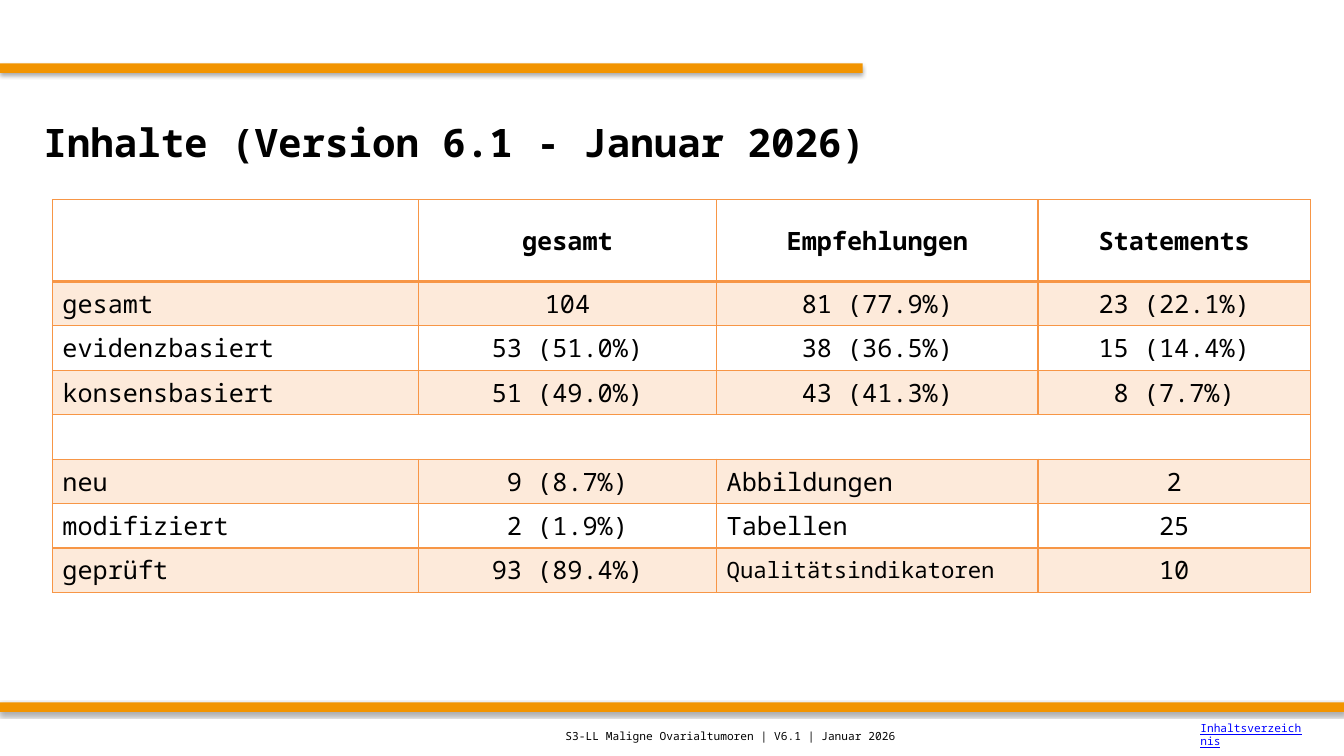
from dataclasses import dataclass

from lxml.etree import SubElement
from pptx import Presentation
from pptx.dml.color import RGBColor
from pptx.enum.shapes import MSO_SHAPE as ShapeKind
from pptx.enum.text import MSO_ANCHOR as Anchor, MSO_AUTO_SIZE as AutoSize, PP_ALIGN as Align
from pptx.oxml.ns import qn
from pptx.slide import Slide
from pptx.table import Table, _Cell as Cell
from pptx.text.text import TextFrame
from pptx.util import Cm, Pt

COLORS = {
    "bar": "F29400",
    "table": "F79646",
    "text": "000000",
    "link": "0000FF",
}
FONT = "Noto Sans Mono"
SLIDE_WIDTH, SLIDE_HEIGHT = 33.87, 19.05


@dataclass(frozen=True)
class Box:
    left: float
    top: float
    width: float
    height: float

    def lengths(self) -> tuple[Cm, Cm, Cm, Cm]:
        return Cm(self.left), Cm(self.top), Cm(self.width), Cm(self.height)


@dataclass(frozen=True)
class TextStyle:
    size: float
    color: str = "text"
    bold: bool = False
    underline: bool = False
    align: Align = Align.LEFT


@dataclass(frozen=True)
class Label:
    text: str
    box: Box
    style: TextStyle


BARS = [Box(0, 1.6, 21.74, 0.24), Box(0, 17.7, SLIDE_WIDTH, 0.24)]
TITLE = Label("Inhalte (Version 6.1 - Januar 2026)", Box(0.84, 2.1, 32.18, 2.97), TextStyle(28, bold=True))
FOOTER_LABELS = [
    Label("S3-LL Maligne Ovarialtumoren | V6.1 | Januar 2026", Box(14, 18.06, 14, 0.99), TextStyle(8)),
    Label("Inhaltsverzeichnis", Box(30, 18.02, 3.1, 0.99), TextStyle(8, "link", underline=True)),
]

TABLE_LEFT, TABLE_TOP = 1.32, 5.03
COLUMN_WIDTHS = [9.22, 7.52, 8.1, 6.86]
HEADER_HEIGHT, ROW_HEIGHT = 2.06, 1.12
ROWS = [
    ["", "gesamt", "Empfehlungen", "Statements"],
    ["gesamt", "104", "81 (77.9%)", "23 (22.1%)"],
    ["evidenzbasiert", "53 (51.0%)", "38 (36.5%)", "15 (14.4%)"],
    ["konsensbasiert", "51 (49.0%)", "43 (41.3%)", "8 (7.7%)"],
    [""] * 4,
    ["neu", "9 (8.7%)", "Abbildungen", "2"],
    ["modifiziert", "2 (1.9%)", "Tabellen", "25"],
    ["geprüft", "93 (89.4%)", "Qualitätsindikatoren", "10"],
]
SMALL_TEXTS = {"Qualitätsindikatoren"}


def rgb(name: str) -> RGBColor:
    return RGBColor.from_string(COLORS[name])


def write(frame: TextFrame, text: str, style: TextStyle) -> None:
    paragraph = frame.paragraphs[0]
    paragraph.alignment = style.align
    run = paragraph.add_run()
    run.text = text
    font = run.font
    font.name, font.size = FONT, Pt(style.size)
    font.bold, font.underline = style.bold, style.underline
    font.color.rgb = rgb(style.color)


def fill_frame(frame: TextFrame, label: Label) -> None:
    frame.word_wrap = True
    frame.auto_size = AutoSize.NONE
    frame.vertical_anchor = Anchor.MIDDLE
    write(frame, label.text, label.style)


def add_bar(slide: Slide, box: Box) -> None:
    bar = slide.shapes.add_shape(ShapeKind.RECTANGLE, *box.lengths())
    bar.fill.solid()
    bar.fill.fore_color.rgb = rgb("bar")
    bar.line.fill.background()
    bar.shadow.inherit = False
    effects = bar.element.spPr.find(qn("a:effectLst"))
    shadow = SubElement(effects, qn("a:outerShdw"), blurRad=str(Pt(3.1)), dist=str(Pt(1.8)),
                        dir="5400000", algn="t", rotWithShape="0")
    color = SubElement(shadow, qn("a:srgbClr"), val=COLORS["text"])
    SubElement(color, qn("a:alpha"), val="35000")


def add_title(slide: Slide) -> None:
    title = slide.shapes.title
    title.left, title.top, title.width, title.height = TITLE.box.lengths()
    fill_frame(title.text_frame, TITLE)


def add_label(slide: Slide, label: Label) -> None:
    fill_frame(slide.shapes.add_textbox(*label.box.lengths()).text_frame, label)


def set_borders(cell: Cell, top: float, bottom: float) -> None:
    properties = cell._tc.get_or_add_tcPr()
    for side, width in (("L", 1), ("R", 1), ("T", top), ("B", bottom)):
        line = SubElement(properties, qn(f"a:ln{side}"), w=str(Pt(width)))
        fill = SubElement(line, qn("a:solidFill"))
        SubElement(fill, qn("a:srgbClr"), val=COLORS["table"])


def set_band(cell: Cell, shaded: bool) -> None:
    if not shaded:
        cell.fill.background()
        return
    cell.fill.solid()
    cell.fill.fore_color.rgb = rgb("table")
    color = cell._tc.tcPr.find(f"{qn('a:solidFill')}/{qn('a:srgbClr')}")
    SubElement(color, qn("a:alpha"), val="20000")


def cell_style(text: str, is_header: bool) -> TextStyle:
    """Centre headings and figures, and keep row names on the left."""
    is_name = text[0].isalpha() and not is_header
    return TextStyle(16 if text in SMALL_TEXTS else 18, bold=is_header,
                     align=Align.LEFT if is_name else Align.CENTER)


def fill_table(table: Table) -> None:
    for column, width in zip(table.columns, COLUMN_WIDTHS):
        column.width = Cm(width)
    for row_index, texts in enumerate(ROWS):
        is_header = row_index == 0
        table.rows[row_index].height = Cm(HEADER_HEIGHT if is_header else ROW_HEIGHT)
        for column_index, text in enumerate(texts):
            cell = table.cell(row_index, column_index)
            cell.vertical_anchor = Anchor.MIDDLE
            set_borders(cell, top=2 if row_index == 1 else 1, bottom=2 if is_header else 1)
            set_band(cell, shaded=row_index % 2 == 1)
            if text:
                write(cell.text_frame, text, cell_style(text, is_header))
        if not any(texts):
            table.cell(row_index, 0).merge(table.cell(row_index, len(texts) - 1))


def add_contents_table(slide: Slide) -> None:
    height = HEADER_HEIGHT + ROW_HEIGHT * (len(ROWS) - 1)
    box = Box(TABLE_LEFT, TABLE_TOP, sum(COLUMN_WIDTHS), height)
    table = slide.shapes.add_table(len(ROWS), len(COLUMN_WIDTHS), *box.lengths()).table
    table.first_row = table.horz_banding = False
    fill_table(table)


def main() -> None:
    presentation = Presentation()
    presentation.slide_width, presentation.slide_height = Cm(SLIDE_WIDTH), Cm(SLIDE_HEIGHT)
    slide = presentation.slides.add_slide(presentation.slide_layouts.get_by_name("Title Only"))
    for bar in BARS:
        add_bar(slide, bar)
    add_title(slide)
    add_contents_table(slide)
    for label in FOOTER_LABELS:
        add_label(slide, label)
    presentation.save("out.pptx")


if __name__ == "__main__":
    main()
